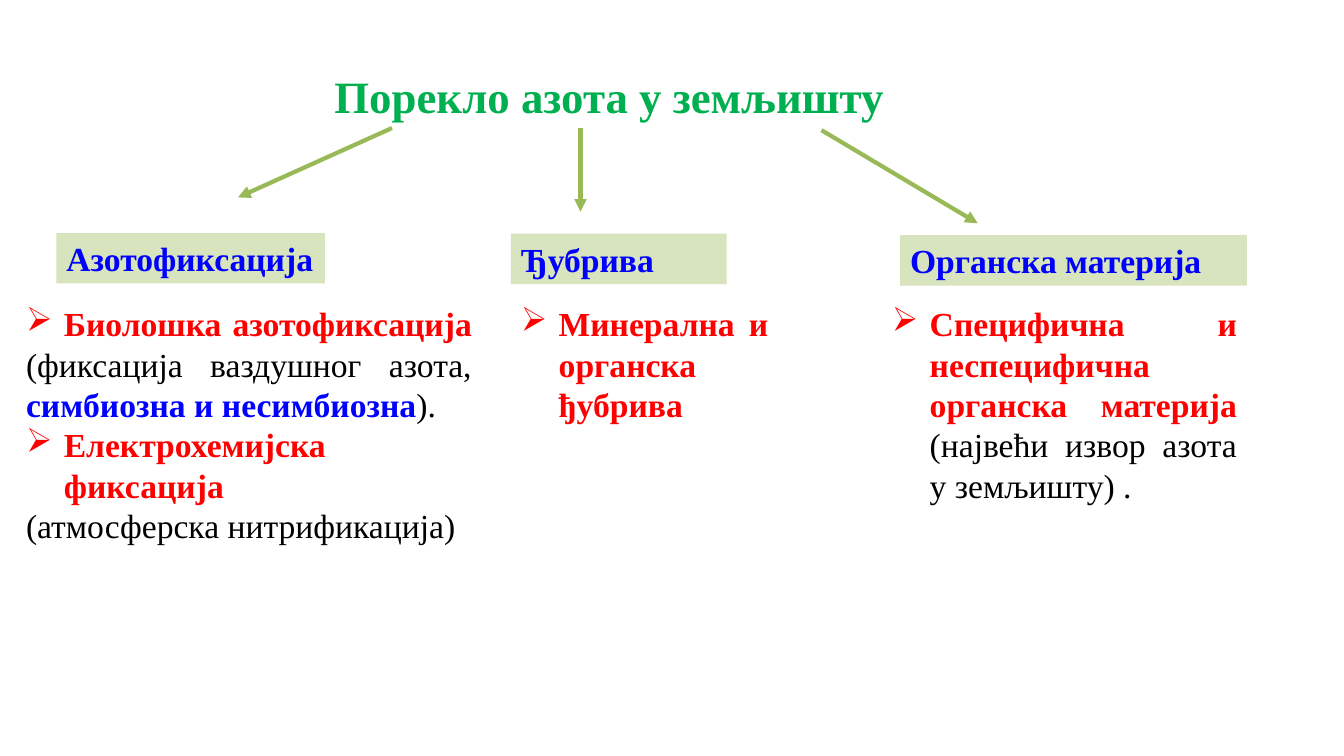
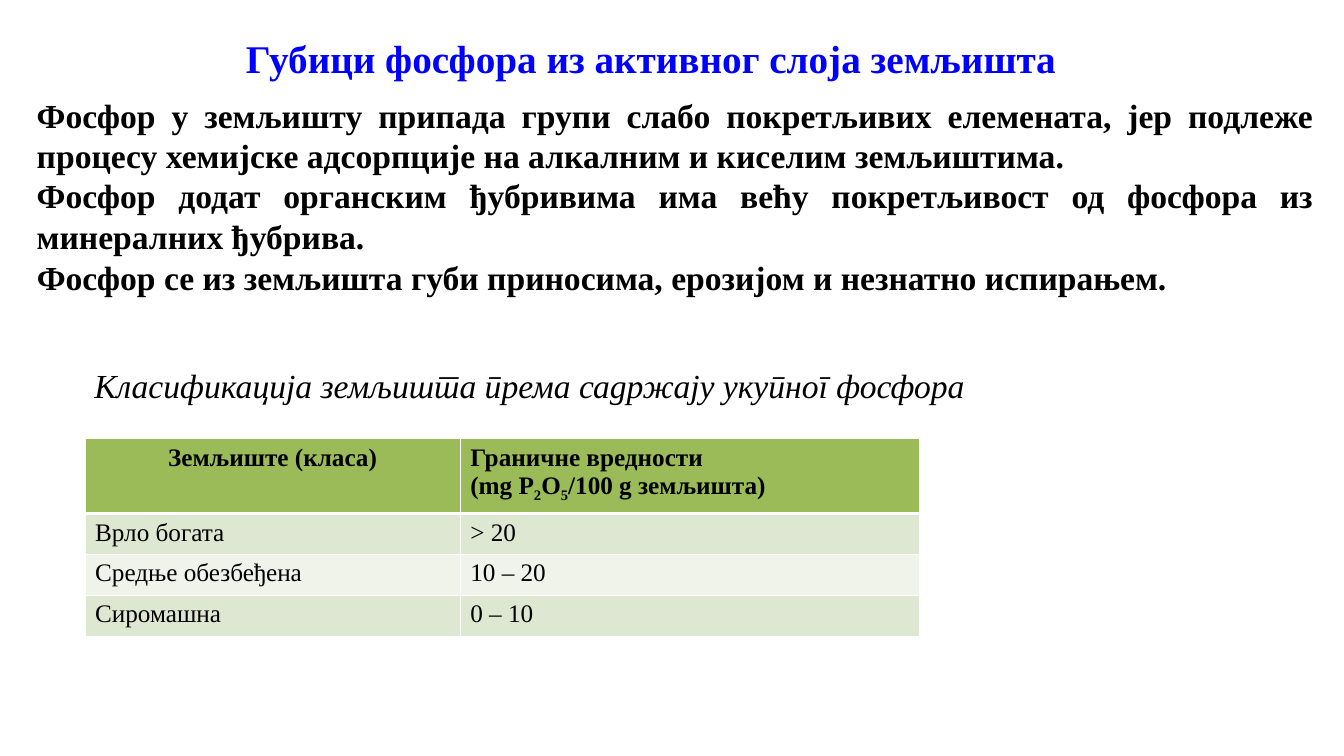
"""Build two slides on nitrogen and phosphorus in soil."""
from dataclasses import dataclass
from typing import NamedTuple

from lxml.etree import SubElement
from pptx import Presentation
from pptx.dml.color import RGBColor
from pptx.enum.shapes import MSO_CONNECTOR, MSO_SHAPE
from pptx.enum.text import MSO_ANCHOR, PP_ALIGN
from pptx.oxml.ns import qn
from pptx.slide import Slide
from pptx.table import _Cell
from pptx.text.text import TextFrame
from pptx.util import Pt

FONT = "Times New Roman"
LANGUAGE = "sr-Cyrl-RS"
BLACK = RGBColor(0x00, 0x00, 0x00)
WHITE = RGBColor(0xFF, 0xFF, 0xFF)
RED = RGBColor(0xFF, 0x00, 0x00)
BLUE = RGBColor(0x00, 0x00, 0xFF)
GREEN = RGBColor(0x00, 0xB0, 0x50)
HEADING_FILL = RGBColor(0xD7, 0xE4, 0xBD)
ARROW_GREEN = RGBColor(0x98, 0xB9, 0x55)
HEADER_FILL = RGBColor(0x9B, 0xBB, 0x59)
BAND_FILLS = (RGBColor(0xDE, 0xE7, 0xD1), RGBColor(0xEF, 0xF3, 0xEA))
BULLET_INDENT = 27
BODY_TOP = 213
HEADING_HEIGHT = 36


class Box(NamedTuple):
    left: float
    top: float
    width: float
    height: float

    def in_points(self) -> tuple:
        return tuple(Pt(value) for value in self)


class Span(NamedTuple):
    text: str
    color: RGBColor = BLACK
    bold: bool = False
    baseline: int = 0


class Para(NamedTuple):
    spans: tuple
    bullet: bool = False


class Arrow(NamedTuple):
    x1: float
    y1: float
    x2: float
    y2: float


@dataclass(frozen=True)
class Source:
    heading: str
    heading_box: Box
    body_box: Box
    body: tuple
    arrow: Arrow


SOURCES = (
    Source(
        "Азотофиксација",
        Box(40.3, 166.5, 191.8, HEADING_HEIGHT),
        Box(11.5, BODY_TOP, 332.6, 181.5),
        (
            Para((Span("Биолошка азотофиксација ", RED, True),), True),
            Para((
                Span("(фиксација ваздушног азота, "),
                Span("симбиозна и несимбиозна", BLUE, True),
                Span(")."),
            )),
            Para((Span("Електрохемијска фиксација ", RED, True),), True),
            Para((Span("(атмосферска нитрификација)"),)),
        ),
        Arrow(280, 91.5, 170, 141),
    ),
    Source(
        "Ђубрива",
        Box(365, 167, 154, HEADING_HEIGHT),
        Box(365, BODY_TOP, 190.8, 94.5),
        (Para((Span("Минерална и органска ђубрива", RED, True),), True),),
        Arrow(414.7, 91.5, 414.7, 151.2),
    ),
    Source(
        "Органска материја",
        Box(643, 168, 247.7, HEADING_HEIGHT),
        Box(630, BODY_TOP, 260.6, 152.5),
        (
            Para((
                Span("Специфична и неспецифична органска материја ", RED, True),
                Span("(највећи извор азота у земљишту) ."),
            ), True),
        ),
        Arrow(586.8, 93, 698.4, 159.5),
    ),
)

LIMITS_HEADER = (
    (Para((Span("Земљиште (класа)", bold=True),)),),
    (
        Para((Span("Граничне вредности", bold=True),)),
        Para((
            Span("(mg P", bold=True),
            Span("2", bold=True, baseline=-25000),
            Span("O", bold=True),
            Span("5", bold=True, baseline=-25000),
            Span("/100 g земљишта)", bold=True),
        )),
    ),
)
LIMITS = (
    ("Врло богата", "> 20"),
    ("Средње обезбеђена", "10 – 20"),
    ("Сиромашна", "0 – 10"),
)


def plain(text: str, color: RGBColor = BLACK, bold: bool = False) -> tuple:
    return (Para((Span(text, color, bold),)),)


def write_text(frame: TextFrame, paras: tuple, *, size: float = 24,
               align: PP_ALIGN = PP_ALIGN.LEFT, italic: bool = False) -> None:
    frame.word_wrap = True
    for index, para in enumerate(paras):
        line = frame.paragraphs[0] if index == 0 else frame.add_paragraph()
        line.alignment = align
        if para.bullet:
            properties = line._p.get_or_add_pPr()
            properties.set("marL", str(Pt(BULLET_INDENT)))
            properties.set("indent", str(-Pt(BULLET_INDENT)))
            SubElement(properties, qn("a:buChar")).set("char", "➢")
        for span in para.spans:
            run = line.add_run()
            run.text = span.text
            run.font.name = FONT
            run.font.size = Pt(size)
            run.font.bold = span.bold
            run.font.italic = italic
            run.font.color.rgb = span.color
            properties = run._r.get_or_add_rPr()
            properties.set("lang", LANGUAGE)
            if span.baseline:
                properties.set("baseline", str(span.baseline))


def add_text(slide: Slide, box: Box, paras: tuple, *, size: float = 24,
             align: PP_ALIGN = PP_ALIGN.LEFT, italic: bool = False) -> None:
    textbox = slide.shapes.add_textbox(*box.in_points())
    write_text(textbox.text_frame, paras, size=size, align=align, italic=italic)


def add_heading(slide: Slide, box: Box, text: str) -> None:
    heading = slide.shapes.add_shape(MSO_SHAPE.RECTANGLE, *box.in_points())
    heading.shadow.inherit = False
    heading.fill.solid()
    heading.fill.fore_color.rgb = HEADING_FILL
    heading.line.fill.background()
    heading.text_frame.vertical_anchor = MSO_ANCHOR.TOP
    write_text(heading.text_frame, plain(text, BLUE, True))


def add_arrow(slide: Slide, arrow: Arrow) -> None:
    connector = slide.shapes.add_connector(
        MSO_CONNECTOR.STRAIGHT, *(Pt(value) for value in arrow))
    connector.line.color.rgb = ARROW_GREEN
    connector.line.width = Pt(3)
    SubElement(connector.line._get_or_add_ln(), qn("a:tailEnd")).set("type", "triangle")
    SubElement(connector._element.spPr, qn("a:effectLst"))


def style_cell(cell: _Cell, fill: RGBColor, *, top: float, bottom: float) -> None:
    properties = cell._tc.get_or_add_tcPr()
    for side, width in (("L", 1), ("R", 1), ("T", top), ("B", bottom)):
        border = SubElement(properties, qn(f"a:ln{side}"))
        border.set("w", str(Pt(width)))
        paint = SubElement(border, qn("a:solidFill"))
        SubElement(paint, qn("a:srgbClr")).set("val", str(WHITE))
    cell.fill.solid()
    cell.fill.fore_color.rgb = fill


def add_limits_table(slide: Slide) -> None:
    rows = (LIMITS_HEADER, *(tuple(plain(text) for text in row) for row in LIMITS))
    heights = (53, *(29.2 for _ in LIMITS))
    box = Box(60.75, 313.4, 596.4, sum(heights))
    table = slide.shapes.add_table(len(rows), 2, *box.in_points()).table
    for column, width in zip(table.columns, (268, 328.4)):
        column.width = Pt(width)
    for r, (row, height) in enumerate(zip(rows, heights)):
        table.rows[r].height = Pt(height)
        fill = BAND_FILLS[(r - 1) % 2] if r else HEADER_FILL
        for c, paras in enumerate(row):
            cell = table.cell(r, c)
            style_cell(cell, fill, top=3 if r == 1 else 1, bottom=1 if r else 3)
            align = PP_ALIGN.CENTER if (r, c) == (0, 0) else PP_ALIGN.LEFT
            write_text(cell.text_frame, paras, size=18, align=align)


def build_nitrogen(slide: Slide) -> None:
    add_text(slide, Box(231.8, 45.5, 416, 46),
             plain("Порекло азота у земљишту", GREEN, True), size=32)
    for source in SOURCES:
        add_heading(slide, source.heading_box, source.heading)
        add_text(slide, source.body_box, source.body, align=PP_ALIGN.JUSTIFY)
        add_arrow(slide, source.arrow)


def build_phosphorus(slide: Slide) -> None:
    add_text(slide, Box(168.5, 21, 602.6, 41),
             plain("Губици фосфора из активног слоја земљишта", BLUE, True), size=28)
    mobility = (
        plain("Фосфор у земљишту припада групи слабо покретљивих елемената, "
              "јер подлеже процесу хемијске адсорпције на алкалним и киселим "
              "земљиштима.", bold=True)
        + plain("Фосфор додат органским ђубривима има већу покретљивост од "
                "фосфора из минералних ђубрива.", bold=True)
    )
    add_text(slide, Box(19.2, 64, 925.9, 124), mobility, align=PP_ALIGN.JUSTIFY)
    add_text(slide, Box(19.2, 180, 925.2, 36),
             plain("Фосфор се из земљишта губи приносима, ерозијом и незнатно "
                   "испирањем.", bold=True))
    add_limits_table(slide)
    add_text(slide, Box(60.3, 257, 650, 36),
             plain("Класификација земљишта према садржају укупног фосфора"),
             italic=True)


def main() -> None:
    deck = Presentation()
    deck.slide_width, deck.slide_height = Pt(960), Pt(540)
    for build in (build_nitrogen, build_phosphorus):
        build(deck.slides.add_slide(deck.slide_layouts[6]))
    deck.save("out.pptx")


if __name__ == "__main__":
    main()
